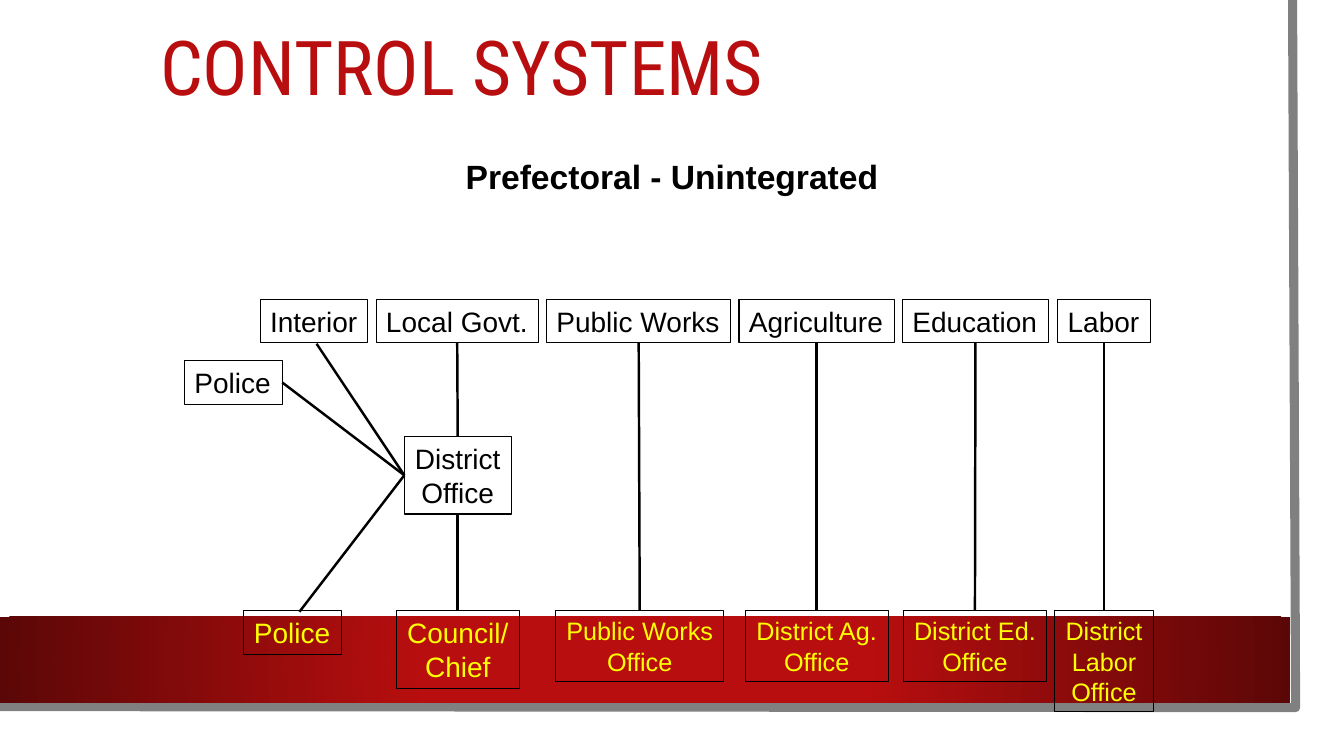
from lxml import etree
from pptx import Presentation
from pptx.dml.color import RGBColor
from pptx.enum.shapes import MSO_CONNECTOR, MSO_SHAPE
from pptx.enum.text import MSO_ANCHOR, MSO_AUTO_SIZE, PP_ALIGN
from pptx.oxml.ns import qn
from pptx.util import Inches, Pt

RECTANGLE, STRAIGHT = MSO_SHAPE.RECTANGLE, MSO_CONNECTOR.STRAIGHT
TOP, MIDDLE = MSO_ANCHOR.TOP, MSO_ANCHOR.MIDDLE
LEFT, CENTER = PP_ALIGN.LEFT, PP_ALIGN.CENTER
FIT_SHAPE, NO_FIT = MSO_AUTO_SIZE.SHAPE_TO_FIT_TEXT, MSO_AUTO_SIZE.NONE
SIDE_TOP, SIDE_LEFT, SIDE_BOTTOM, SIDE_RIGHT = 0, 1, 2, 3

# Content
TITLE = "CONTROL SYSTEMS"
SUBTITLE = "Prefectoral - Unintegrated"
MINISTRY_TOP, FIELD_TOP = 2.97, 6.06
# Each box: key, lines, left, width
MINISTRIES = [
    ("interior", ["Interior"], 2.58, 1.07),
    ("local", ["Local Govt."], 3.73, 1.61),
    ("works", ["Public Works"], 5.42, 1.83),
    ("agriculture", ["Agriculture"], 7.33, 1.54),
    ("education", ["Education"], 8.95, 1.45),
    ("labor", ["Labor"], 10.49, 0.92),
]
FIELD_LARGE = [
    ("field police", ["Police"], 2.42, 0.97),
    ("council", ["Council/", "Chief"], 3.93, 1.22),
]
FIELD_SMALL = [
    ("works office", ["Public Works", "Office"], 5.51, 1.67),
    ("agriculture office", ["District Ag.", "Office"], 7.39, 1.42),
    ("education office", ["District Ed.", "Office"], 8.96, 1.42),
    ("labor office", ["District", "Labor", "Office"], 10.46, 0.98),
]
POLICE = ("police", ["Police"], 1.83, 0.97)
DISTRICT = ("district", ["District", "Office"], 4.01, 1.06)
# Each end is a box key with a side, or a free point in inches
LINKS = [
    ((3.14, 3.41), ("district", SIDE_LEFT)),
    ((2.97, 6.07), ("district", SIDE_LEFT)),
    (("police", SIDE_RIGHT), ("district", SIDE_LEFT)),
    (("district", SIDE_BOTTOM), ("council", SIDE_TOP)),
    (("district", SIDE_TOP), ("local", SIDE_BOTTOM)),
] + [
    ((key, SIDE_BOTTOM), (key + " office", SIDE_TOP))
    for key in ("works", "agriculture", "education", "labor")
]


class Theme:
    red = RGBColor(0xB8, 0x0E, 0x0F)
    dark_red = RGBColor(0x5C, 0x07, 0x07)
    gray = RGBColor(0x80, 0x80, 0x80)
    black = RGBColor(0, 0, 0)
    yellow = RGBColor(0xFF, 0xFF, 0)
    white = RGBColor(0xFF, 0xFF, 0xFF)
    title_font, body_font = "Roboto Condensed", "Arial"
    title, subtitle, label, small = 54, 24, 20, 18
    box_line, link_line, edge_line = 0.75, 1.75, 6.5


deck = Presentation()
deck.slide_width, deck.slide_height = Inches(13.33), Inches(7.5)
page = deck.slides.add_slide(deck.slide_layouts[6])
boxes = {}


def write(shape, lines, size, color=Theme.black, font=Theme.body_font, bold=False,
          align=LEFT, anchor=TOP, wrap=False, fit=FIT_SHAPE, spacing=None):
    frame = shape.text_frame
    frame.word_wrap, frame.auto_size, frame.vertical_anchor = wrap, fit, anchor
    for index, line in enumerate(lines):
        para = frame.paragraphs[0] if index == 0 else frame.add_paragraph()
        para.alignment, para.line_spacing = align, spacing
        span = para.add_run()
        span.text = line
        span.font.name, span.font.size, span.font.bold = font, Pt(size), bold
        span.font.color.rgb = color


def add_rectangle(left, top, width, height):
    shape = page.shapes.add_shape(
        RECTANGLE, Inches(left), Inches(top), Inches(width), Inches(height))
    shape.shadow.inherit = False
    return shape


def add_box(entry, top, size=Theme.label, color=Theme.black):
    key, lines, left, width = entry
    height = round(0.1 + len(lines) * size / 60, 2)
    box = add_rectangle(left, top, width, height)
    box.fill.background()
    box.line.color.rgb, box.line.width = Theme.black, Pt(Theme.box_line)
    write(box, lines, size, color, align=CENTER if len(lines) > 1 else LEFT)
    boxes[key] = box


def add_link(begin, end):
    link = page.shapes.add_connector(STRAIGHT, 0, 0, 0, 0)
    if begin[0] in boxes:
        link.begin_connect(boxes[begin[0]], begin[1])
    else:
        link.begin_x, link.begin_y = Inches(begin[0]), Inches(begin[1])
    link.end_connect(boxes[end[0]], end[1])
    link.line.color.rgb, link.line.width = Theme.black, Pt(Theme.link_line)
    etree.SubElement(link._element.spPr, qn("a:effectLst"))


# White sheet with a gray edge
sheet = add_rectangle(0, 0, 13.1, 7.27)
sheet.fill.solid()
sheet.fill.fore_color.rgb = Theme.white
sheet.line.fill.background()

outline = page.shapes.build_freeform(Inches(12.82), 0)
outline.add_line_segments(
    [(Inches(12.85), Inches(7.02)), (Inches(-0.03), Inches(7.01))], close=False)
edge = outline.convert_to_shape()
edge.shadow.inherit = False
edge.fill.background()
edge.line.color.rgb, edge.line.width = Theme.gray, Pt(Theme.edge_line)

# Red band with a radial gradient
band = add_rectangle(0, 6.12, 12.8, 0.85)
band.line.fill.background()
band.fill.gradient()
stops = zip(band.fill.gradient_stops, ((0.34, Theme.red), (1, Theme.dark_red)))
for stop, (position, color) in stops:
    stop.position, stop.color.rgb = position, color
gradient = band._element.spPr.find(qn("a:gradFill"))
gradient.remove(gradient.find(qn("a:lin")))
radial = etree.SubElement(gradient, qn("a:path"), {"path": "circle"})
etree.SubElement(radial, qn("a:fillToRect"), dict.fromkeys("ltrb", "50000"))

# Headings
title = page.shapes.add_textbox(Inches(1.49), Inches(0.07), Inches(11.37), Inches(1.26))
write(title, [TITLE], Theme.title, Theme.red, Theme.title_font,
      anchor=MIDDLE, wrap=True, fit=NO_FIT, spacing=0.9)
subtitle = page.shapes.add_textbox(Inches(4.52), Inches(1.5), Inches(4.3), Inches(0.5))
write(subtitle, [SUBTITLE], Theme.subtitle, bold=True)

# Organisation boxes
for ministry in MINISTRIES:
    add_box(ministry, MINISTRY_TOP)
add_box(POLICE, 3.58)
add_box(DISTRICT, 4.33)
for office in FIELD_LARGE:
    add_box(office, FIELD_TOP, color=Theme.yellow)
for office in FIELD_SMALL:
    add_box(office, FIELD_TOP, Theme.small, Theme.yellow)

# Lines of control
for begin, end in LINKS:
    add_link(begin, end)

deck.save("out.pptx")
